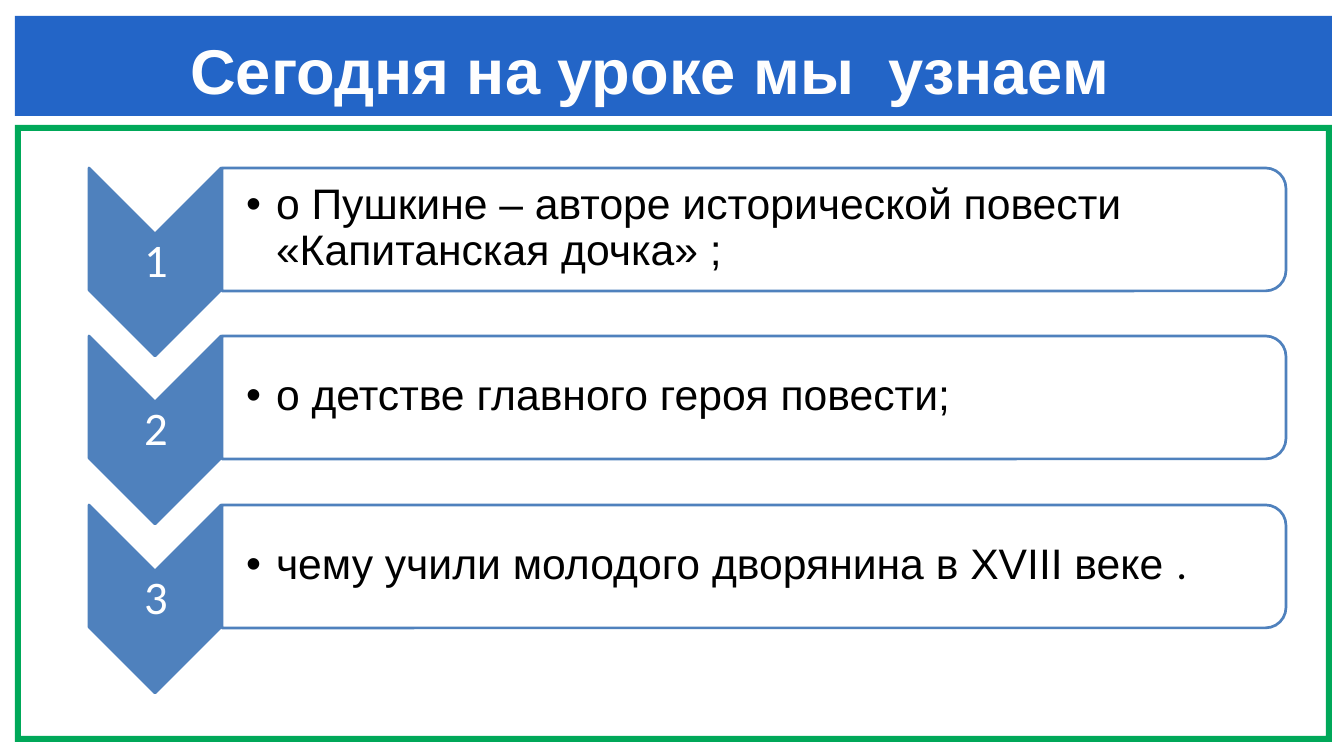
import dataclasses

import lxml.etree
import pptx
import pptx.dml.color
import pptx.enum.shapes
import pptx.enum.text
import pptx.oxml.ns
import pptx.util

PX = 9525  # EMU in one px
SHAPES = pptx.enum.shapes.MSO_SHAPE
ALIGN = pptx.enum.text.PP_ALIGN
ANCHOR = pptx.enum.text.MSO_ANCHOR


@dataclasses.dataclass(frozen=True)
class Theme:
    banner: str = "2365C7"
    frame: str = "00A859"
    accent: str = "4F81BD"
    white: str = "FFFFFF"
    title_text: str = "FEFEFE"
    topic_text: str = "000000"
    title_size: float = 47.4
    number_size: float = 35
    topic_size: float = 32
    font: str = "Arial"
    number_font: str = "Calibri"


THEME = Theme()
TITLE = "Сегодня на уроке мы  узнаем"
TOPICS = [
    [("о Пушкине – авторе исторической повести «Капитанская дочка» ;", THEME.font)],
    [("о детстве главного героя повести;", THEME.font)],
    [("чему учили молодого дворянина в XVIII веке ", THEME.font), (".", THEME.number_font)],
]


def apply(target, formats):
    for attribute, value in formats.items():
        setattr(target, attribute, value)


def rgb(color):
    return pptx.dml.color.RGBColor.from_string(color)


def place(element, box):
    sizes = (round(length * PX) for length in box)
    apply(element, dict(zip(("left", "top", "width", "height"), sizes)))


def add_block(slide, kind, box, fill, outline=None):
    block = slide.shapes.add_shape(kind, *(length * PX for length in box))
    block.shadow.inherit = False
    block.fill.solid()
    block.fill.fore_color.rgb = rgb(fill)
    if outline:
        block.line.color.rgb = rgb(outline)
        block.line.width = pptx.util.Pt(2)
    else:
        block.line.fill.background()
    return block


def add_turned_block(slide, kind, box, fill):
    """Add a block turned by 90 degrees that covers the given box as seen."""
    left, top, width, height = box
    block = add_block(slide, kind, box, fill, THEME.accent)
    shift = (width - height) / 2
    place(block, (left + shift, top - shift, height, width))
    block.rotation = 90
    return block


def make_translucent(block, percent):
    color = block.fill._xPr.find(".//" + pptx.oxml.ns.qn("a:srgbClr"))
    alpha = lxml.etree.SubElement(color, pptx.oxml.ns.qn("a:alpha"))
    alpha.set("val", str(percent * 1000))


def write_text(holder, box, runs, size, color, bold=False, anchor=ANCHOR.MIDDLE,
               align=ALIGN.LEFT, spacing=0.9, inset=2, left_inset=2):
    place(holder, box)
    frame = holder.text_frame
    apply(frame, {
        "word_wrap": True,
        "auto_size": pptx.enum.text.MSO_AUTO_SIZE.NONE,
        "vertical_anchor": anchor,
        "margin_left": left_inset * PX,
        "margin_top": inset * PX,
        "margin_right": inset * PX,
        "margin_bottom": inset * PX,
    })
    paragraph = frame.paragraphs[0]
    apply(paragraph, {"alignment": align, "line_spacing": spacing,
                      "space_before": pptx.util.Pt(0)})
    for text, font in runs:
        run = paragraph.add_run()
        run.text = text
        apply(run.font, {"name": font, "size": pptx.util.Pt(size), "bold": bold})
        run.font.color.rgb = rgb(color)
    return paragraph


def add_bullet(paragraph, indent):
    properties = paragraph._p.get_or_add_pPr()
    properties.set("marL", str(indent * PX))
    properties.set("indent", str(-indent * PX))
    bullet = lxml.etree.SubElement(properties, pptx.oxml.ns.qn("a:buChar"))
    bullet.set("char", "•")


def bring_to_front(element):
    element.getparent().append(element)


def add_topic(slide, number, holder, runs, top):
    add_turned_block(slide, SHAPES.CHEVRON, (89, top, 132, 188), THEME.accent)
    label = slide.shapes.add_textbox(0, 0, PX, PX)
    write_text(label, (90, top + 66, 132, 57), [(str(number), THEME.number_font)],
               THEME.number_size, THEME.white, align=ALIGN.CENTER)
    panel = add_turned_block(slide, SHAPES.ROUND_2_SAME_RECTANGLE,
                             (222, top, 1064, 123), THEME.white)
    make_translucent(panel, 90)
    paragraph = write_text(holder, (222, top + 6, 1058, 110), runs,
                           THEME.topic_size, THEME.topic_text, left_inset=24)
    add_bullet(paragraph, 30)
    bring_to_front(holder.element)


def main():
    deck = pptx.Presentation()
    apply(deck, {"slide_width": 1344 * PX, "slide_height": 756 * PX})
    slide = deck.slides.add_slide(deck.slide_layouts.get_by_name("Comparison"))
    title, *holders = [p for p in slide.placeholders if p.placeholder_format.idx < 10]

    frame = add_block(slide, SHAPES.FRAME, (15, 125, 1317, 617), THEME.frame)
    frame.adjustments[0] = 6 / 617
    add_block(slide, SHAPES.RECTANGLE, (15, 16, 1317, 100), THEME.banner)
    write_text(title, (52, 31, 1196, 77), [(TITLE, THEME.font)], THEME.title_size,
               THEME.title_text, bold=True, anchor=ANCHOR.TOP, align=ALIGN.CENTER,
               spacing=1.0, inset=0, left_inset=0)
    bring_to_front(title.element)

    for index, (holder, runs) in enumerate(zip(holders, TOPICS)):
        add_topic(slide, index + 1, holder, runs, 168 + index * 337 // 2)
    for spare in holders[len(TOPICS):]:
        spare.element.getparent().remove(spare.element)

    deck.save("out.pptx")


if __name__ == "__main__":
    main()
